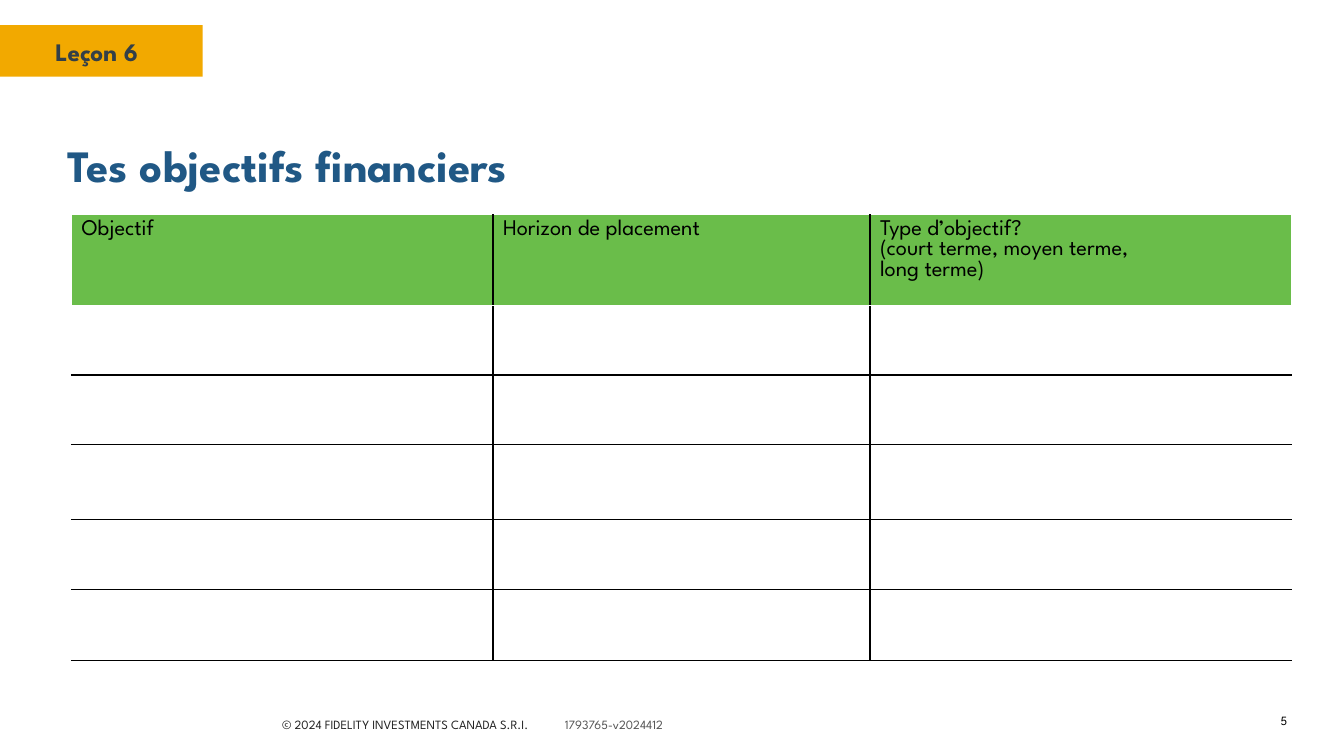
"""Build the slide "Tes objectifs financiers", a table of goals to fill in."""
from copy import deepcopy
from dataclasses import dataclass

from lxml.etree import SubElement
from pptx import Presentation
from pptx.dml.color import RGBColor as Rgb
from pptx.enum.shapes import MSO_SHAPE as Shape
from pptx.enum.text import MSO_ANCHOR as Anchor, PP_ALIGN as Align
from pptx.oxml.ns import qn
from pptx.slide import Slide
from pptx.table import Table, _Cell as Cell
from pptx.text.text import TextFrame, _Paragraph as Paragraph
from pptx.util import Pt


@dataclass(frozen=True)
class Theme:
    font: str = "League Spartan"
    amber: str = "F2A900"
    green: str = "6ABD4A"
    blue: str = "205885"
    slate: str = "333F48"
    ink: str = "222222"
    grey: str = "545454"
    black: str = "000000"
    white: str = "FFFFFF"
    title_size: float = 32
    lesson_size: float = 18
    table_size: float = 16
    footer_size: float = 9


@dataclass(frozen=True)
class Label:
    pieces: tuple[tuple[str, str], ...]
    left: float
    top: float
    width: float
    height: float
    size: float
    bold: bool = False
    align: Align = Align.LEFT
    tab: float = 0


THEME = Theme()
SLIDE_WIDTH, SLIDE_HEIGHT = 960, 540
LABELS = (
    Label((("Leçon 6", THEME.slate),), 32.4, 22.3, 94.3, 28.8, THEME.lesson_size, True),
    Label((("© 2024 FIDELITY INVESTMENTS CANADA S.R.I.\t", THEME.ink),
           ("1793765-v2024412", THEME.grey)),
          194.4, 508.3, 314.6, 18, THEME.footer_size, tab=202),
    Label((("Tes objectifs financiers", THEME.blue),),
          41, 91.4, 878.4, 52.6, THEME.title_size, True),
    Label((("5", THEME.black),), 876.2, 508.3, 50.4, 13, THEME.footer_size, align=Align.RIGHT),
)
HEADINGS = (
    "Objectif",
    "Horizon de placement",
    "Type d’objectif?\n(court terme, moyen terme,\vlong terme)",
)
COLUMN_WIDTHS = (301, 269.3, 301)
ROW_HEIGHTS = (46.8, 49.7, 49.7, 53.3, 50.4, 50.4)
TABLE_LEFT, TABLE_TOP = 51.1, 153.4


def format_runs(paragraph: Paragraph, size: float, color: str, bold: bool = False) -> None:
    """Give the runs and line breaks of a paragraph one type style."""
    values = {"name": THEME.font, "size": Pt(size), "bold": bold}
    for run in paragraph.runs:
        for attribute, value in values.items():
            setattr(run.font, attribute, value)
        run.font.color.rgb = Rgb.from_string(color)
    for line_break in paragraph._p.findall(qn("a:br")):
        line_break.append(deepcopy(paragraph.runs[0]._r.rPr))


def add_tab(paragraph: Paragraph, position: float) -> None:
    """Add a left tab stop to a paragraph."""
    stops = SubElement(paragraph._p.get_or_add_pPr(), qn("a:tabLst"))
    SubElement(stops, qn("a:tab"), pos=str(Pt(position)), algn="l")


def add_label(slide: Slide, label: Label) -> None:
    """Place one line of text on the slide."""
    box = slide.shapes.add_textbox(*map(Pt, (label.left, label.top, label.width, label.height)))
    frame: TextFrame = box.text_frame
    for attribute, value in {"word_wrap": True, "vertical_anchor": Anchor.MIDDLE}.items():
        setattr(frame, attribute, value)
    paragraph = frame.paragraphs[0]
    paragraph.alignment = label.align
    if label.tab:
        add_tab(paragraph, label.tab)
    for text, color in label.pieces:
        run = paragraph.add_run()
        run.text = text
        values = {"name": THEME.font, "size": Pt(label.size), "bold": label.bold}
        for attribute, value in values.items():
            setattr(run.font, attribute, value)
        run.font.color.rgb = Rgb.from_string(color)


def add_lesson_band(slide: Slide) -> None:
    """Draw the band behind the lesson number."""
    band = slide.shapes.add_shape(Shape.RECTANGLE, *map(Pt, (0, 18, 144.7, 36.7)))
    band.shadow.inherit = False
    band.fill.solid()
    band.fill.fore_color.rgb = Rgb.from_string(THEME.amber)
    band.line.fill.background()


def set_borders(cell: Cell, row: int, column: int) -> None:
    """Rule the inner columns and the foot of each goal row in black."""
    inner = range(1, len(COLUMN_WIDTHS))
    ruled = {"L": column in inner, "R": column + 1 in inner, "T": row > 1, "B": row > 0}
    for side, is_black in ruled.items():
        line = SubElement(cell._tc.get_or_add_tcPr(), qn(f"a:ln{side}"), w=str(Pt(1)))
        fill = SubElement(line, qn("a:solidFill"))
        SubElement(fill, qn("a:srgbClr"), val=THEME.black if is_black else THEME.white)


def add_goals(slide: Slide) -> None:
    """Add the table of goals with its headings and blank rows."""
    goals: Table = slide.shapes.add_table(
        len(ROW_HEIGHTS), len(COLUMN_WIDTHS), Pt(TABLE_LEFT), Pt(TABLE_TOP),
        Pt(sum(COLUMN_WIDTHS)), Pt(sum(ROW_HEIGHTS))).table
    for attribute, value in {"first_row": False, "horz_banding": False}.items():
        setattr(goals, attribute, value)
    for column, width in zip(goals.columns, COLUMN_WIDTHS):
        column.width = Pt(width)
    for row_index, (row, height) in enumerate(zip(goals.rows, ROW_HEIGHTS)):
        row.height = Pt(height)
        for column_index, cell in enumerate(row.cells):
            set_borders(cell, row_index, column_index)
            cell.fill.solid()
            cell.fill.fore_color.rgb = Rgb.from_string(THEME.white if row_index else THEME.green)
    for column_index, heading in enumerate(HEADINGS):
        frame = goals.cell(0, column_index).text_frame
        frame.text = heading
        for paragraph in frame.paragraphs:
            format_runs(paragraph, THEME.table_size, THEME.black)


def main() -> None:
    """Build and save the slide."""
    deck = Presentation()
    for attribute, value in {"slide_width": SLIDE_WIDTH, "slide_height": SLIDE_HEIGHT}.items():
        setattr(deck, attribute, Pt(value))
    slide = deck.slides.add_slide(deck.slide_layouts[6])
    add_lesson_band(slide)
    for label in LABELS:
        add_label(slide, label)
    add_goals(slide)
    deck.save("out.pptx")


if __name__ == "__main__":
    main()
